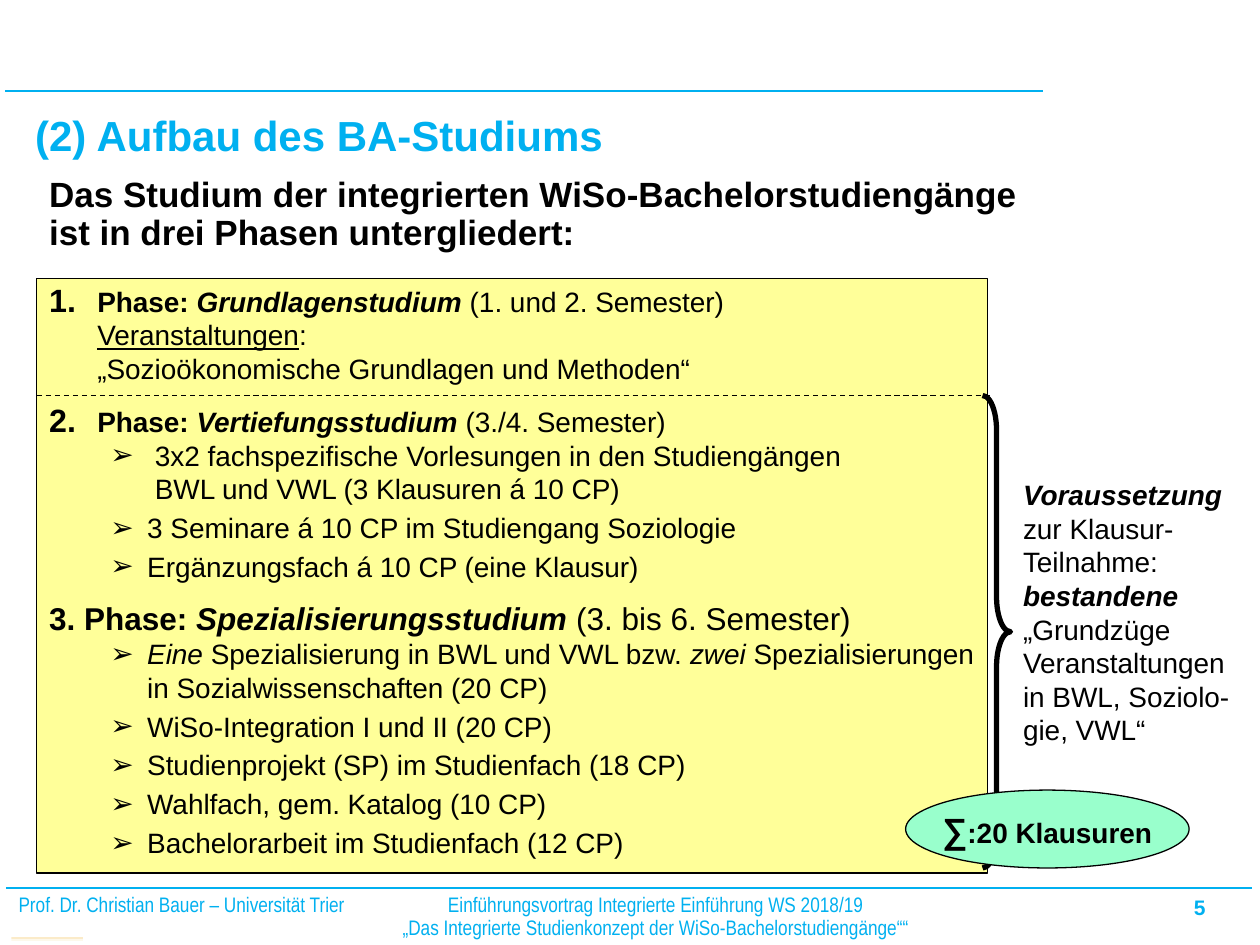
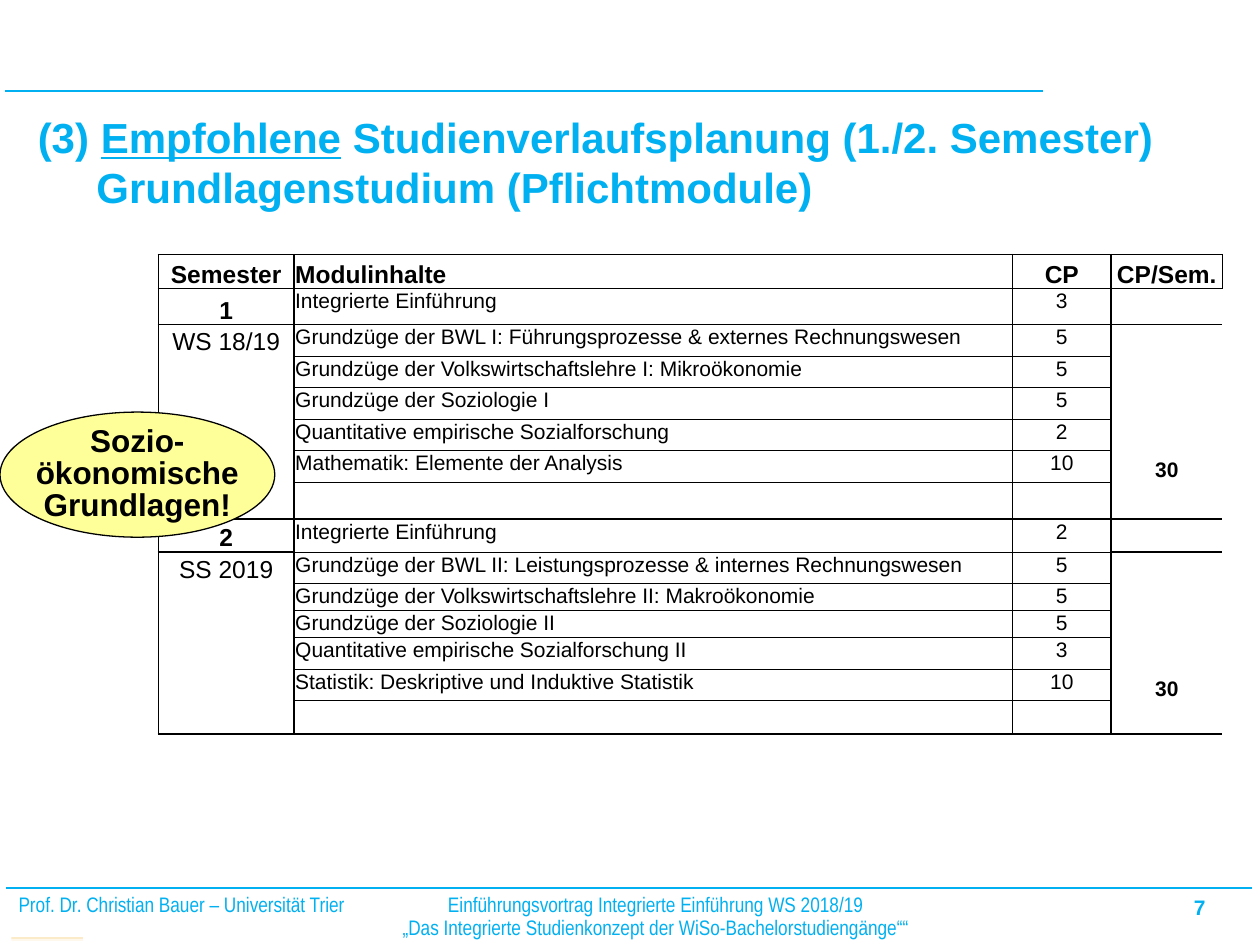
"""Builds two slides on the structure and plan of a bachelor degree."""
from lxml import etree
from pptx import Presentation
from pptx import util as u
from pptx.dml.color import RGBColor
from pptx.enum import dml, shapes, text
from pptx.oxml import ns

Pt = u.Pt
HUE = {"blue": "00B0F0", "black": "000000", "cream": "FFFF99",
       "mint": "99FFCC", "sand": "F5C966"}
LEFT, MID, RIGHT = (text.PP_ALIGN.LEFT, text.PP_ALIGN.CENTER,
                    text.PP_ALIGN.RIGHT)
TOP, CORE, BASE = (text.MSO_ANCHOR.TOP, text.MSO_ANCHOR.MIDDLE,
                   text.MSO_ANCHOR.BOTTOM)

TITLE = {"size": 24, "hue": "blue"}
NOTE = {"size": 12, "hue": "blue", "name": "Arial Narrow"}
HEAD = {"size": 16, "hang": 27.5, "mark": "num"}
ITEM = {"size": 16, "left": 56, "hang": 21, "mark": "➢", "after": 3}

PHASES = [
    ([("Phase: ", "b"), ("Grundlagenstudium ", "bi"),
      ("(1. und 2. Semester)\n", ""), ("Veranstaltungen", "u"),
      (":\n„Sozioökonomische Grundlagen und Methoden“", "")], HEAD),
    ([("Phase: ", "b"), ("Vertiefungsstudium ", "bi"),
      ("(3./4. Semester)", "")], {**HEAD, "before": 11.2}),
    ([(" 3x2 fachspezifische Vorlesungen in den Studiengängen\n"
       " BWL und VWL (3 Klausuren á 10 CP)", "")], ITEM),
    ([("3 Seminare á 10 CP im Studiengang Soziologie", "")], ITEM),
    ([("Ergänzungsfach á 10 CP (eine Klausur)", "")], ITEM),
    ([("3. Phase: ", "b"), ("Spezialisierungsstudium ", "bi"),
      ("(3. bis 6. Semester)", "")],
     {"size": 18, "hang": 21.5, "before": 6}),
    ([("Eine", "i"), (" Spezialisierung in BWL und VWL bzw. ", ""),
      ("zwei ", "i"),
      ("Spezialisierungen in Sozialwissenschaften (20 CP)", "")], ITEM),
    ([("WiSo-Integration I und II (20 CP)", "")], ITEM),
    ([("Studienprojekt (SP) im Studienfach (18 CP)", "")], ITEM),
    ([("Wahlfach, gem. Katalog (10 CP)", "")], ITEM),
    ([("Bachelorarbeit im Studienfach (12 CP)", "")], ITEM),
]

TERMS = [
    ("1", "WS 18/19", [
        ("Integrierte Einführung", "3"),
        ("Grundzüge der BWL I: Führungsprozesse & externes Rechnungswesen",
         "5"),
        ("Grundzüge der Volkswirtschaftslehre I: Mikroökonomie", "5"),
        ("Grundzüge der Soziologie I", "5"),
        ("Quantitative empirische Sozialforschung", "2"),
        ("Mathematik: Elemente der Analysis", "10")]),
    ("2", "SS 2019", [
        ("Integrierte Einführung", "2"),
        ("Grundzüge der BWL II: Leistungsprozesse & internes Rechnungswesen",
         "5"),
        ("Grundzüge der Volkswirtschaftslehre II: Makroökonomie", "5"),
        ("Grundzüge der Soziologie II", "5"),
        ("Quantitative empirische Sozialforschung II", "3"),
        ("Statistik: Deskriptive und Induktive Statistik", "10")]),
]
WIDTHS = [77.5, 410.5, 56.5, 63.5]
HEIGHTS = [19.5, 20.5, 18, 18, 18, 18, 18, 21, 19, 18, 15.5, 15.5, 18, 18, 19]


def rgb(hue):
    """Return the colour of a palette name."""
    return RGBColor.from_string(HUE[hue])


def put(thing, vals):
    """Set each attribute of a dict on an object."""
    for key, val in vals.items():
        setattr(thing, key, val)


def sub(node, tag, **attrs):
    """Append a DrawingML child element."""
    return etree.SubElement(node, ns.qn("a:" + tag), attrs)


def mark(par, look):
    """Give a paragraph its indent and its bullet or number."""
    props = par._p.get_or_add_pPr()
    hang = look["hang"]
    props.set("marL", str(int(Pt(look.get("left", hang)))))
    props.set("indent", str(-int(Pt(hang))))
    if look.get("mark") == "num":
        sub(props, "buSzPct", val="115000")
        sub(props, "buFont", typeface="Arial")
        sub(props, "buAutoNum", type="arabicPeriod")
    elif "mark" in look:
        sub(props, "buChar", char=look["mark"])


def write(par, runs, look):
    """Fill a paragraph with runs of (words, flags, own size)."""
    size = look["size"]
    put(par, {"alignment": look.get("align", LEFT),
              "line_spacing": look.get("lines"),
              "space_before": Pt(look.get("before", 0)),
              "space_after": Pt(look.get("after", 0))})
    if "hang" in look:
        mark(par, look)
    for words, flags, *own in runs:
        for row, part in enumerate(words.split("\n")):
            if row:
                par.add_line_break()
                sub(par._p[-1], "rPr", sz=str(size * 100))
            if part:
                run = par.add_run()
                run.text = part
                put(run.font, {"name": look.get("name", "Arial"),
                               "size": Pt(own[0] if own else size),
                               "bold": "b" in flags, "italic": "i" in flags,
                               "underline": "u" in flags})
                run.font.color.rgb = rgb(look.get("hue", "black"))
    if not par.runs:
        sub(par._p, "endParaRPr", sz=str(size * 100))


def fill(frame, pars, anchor=TOP, wrap=True):
    """Fill a text frame with (runs, look) paragraphs."""
    put(frame, {"vertical_anchor": anchor, "word_wrap": wrap})
    for num, (runs, look) in enumerate(pars):
        par = frame.add_paragraph() if num else frame.paragraphs[0]
        write(par, runs, look)


def label(slide, spot, runs, look, **opts):
    """Add a text box with one paragraph."""
    box = slide.shapes.add_textbox(*map(Pt, spot))
    fill(box.text_frame, [(runs, look)], **opts)
    return box


def form(slide, kind, spot, hue=None, edge=0.75):
    """Add a preset shape with a plain fill and a black edge."""
    item = slide.shapes.add_shape(kind, *map(Pt, spot))
    item.shadow.inherit = False
    if hue:
        item.fill.solid()
        item.fill.fore_color.rgb = rgb(hue)
    else:
        item.fill.background()
    if edge:
        item.line.color.rgb = rgb("black")
        item.line.width = Pt(edge)
    else:
        item.line.fill.background()
    return item


def rule(slide, start, end, high, hue="blue", width=1.5, dash=None):
    """Add a level line."""
    line = slide.shapes.add_connector(
        shapes.MSO_CONNECTOR.STRAIGHT, Pt(start), Pt(high), Pt(end), Pt(high))
    line.line.color.rgb = rgb(hue)
    put(line.line, {"width": Pt(width), "dash_style": dash})
    sub(line._element.spPr, "effectLst")


def base(deck, page):
    """Add a blank slide with the shared lines and footer."""
    slide = deck.slides.add_slide(deck.slide_layouts[6])
    rule(slide, 3, 596, 52)
    for step in range(3):
        form(slide, shapes.MSO_SHAPE.RECTANGLE,
             (6.5, 535.7 + 0.7 * step, 41, 0.1), "sand", 0)
    rule(slide, 3.5, 715.5, 507.5)
    label(slide, (606, 507.5, 90, 24), [(page, "b")],
          {"size": 12, "hue": "blue", "align": RIGHT})
    label(slide, (3.5, 507.5, 226, 20),
          [("Prof. Dr. Christian Bauer – Universität Trier", "")],
          {**NOTE, "lines": 0.9})
    label(slide, (222.5, 507.5, 304.5, 33),
          [("Einführungsvortrag Integrierte Einführung WS 2018/19\n"
            "„Das Integrierte Studienkonzept der "
            "WiSo-Bachelorstudiengänge““", "")],
          {**NOTE, "lines": 0.9, "align": MID}, wrap=False)
    return slide


def phases(deck):
    """Build the slide on the three phases."""
    slide = base(deck, "5")
    label(slide, (13, 29.5, 696, 66), [("(2) Aufbau des BA-Studiums", "b")],
          {**TITLE, "lines": 0.9}, anchor=BASE)
    panel = form(slide, shapes.MSO_SHAPE.RECTANGLE,
                 (21, 159, 543.5, 340), "cream")
    fill(panel.text_frame, PHASES)
    label(slide, (21, 98, 659, 50.5),
          [("Das Studium der integrierten WiSo-Bachelorstudiengänge\n"
            "ist in drei Phasen untergliedert:", "b")],
          {"size": 20, "lines": 0.9})
    rule(slide, 21, 566, 226, "black", 0.75, dml.MSO_LINE.DASH)
    brace = form(slide, shapes.MSO_SHAPE.RIGHT_BRACE,
                 (561.5, 226, 16, 270), edge=3)
    brace.adjustments[0] = 1.24
    label(slide, (577.5, 269.5, 142, 162.5),
          [("Voraussetzung ", "bi"), ("zur Klausur-\nTeilnahme: ", ""),
           ("bestandene ", "bi"),
           ("„Grundzüge Veranstaltungen in BWL, Soziolo-gie, VWL“", "")],
          {"size": 16})
    total = form(slide, shapes.MSO_SHAPE.OVAL, (517.5, 451.5, 162, 44.5),
                 "mint")
    fill(total.text_frame, [([("∑", "b", 20), (":20 Klausuren", "b")],
                             {"size": 16, "align": MID})], CORE, False)


def rows():
    """List the table rows as (words, flags, size) cells."""
    out = [[(name, "b", 14)
            for name in ("Semester", "Modulinhalte", "CP", "CP/Sem.")]]
    for num, term, units in TERMS:
        first = [(num, "b", 14), (term, "", 14)] + [("", "", 12)] * 5
        last = [("", "", 12)] * 5 + [("30", "b", 12), ("", "", 12)]
        for side, (name, points), total in zip(first, units + [("", "")],
                                               last):
            out.append([side, (name, "", 12), (points, "", 12), total])
    return out


def edges(row, col):
    """Return the border widths of a cell by side."""
    span = len(TERMS[0][2]) + 1
    thin = 0.5 if col in (1, 2) else 0
    return {"L": 1, "R": 1 if col < 3 or row == 0 else 0,
            "T": 1 if row == 0 or row % span == 1 else thin,
            "B": 1 if row % span == 0 else thin}


def frame(cell, row, col):
    """Draw the borders of a cell and clear its fill."""
    props = cell._tc.get_or_add_tcPr()
    for side, width in edges(row, col).items():
        if width:
            line = sub(props, "ln" + side, w=str(int(Pt(width))))
            sub(sub(line, "solidFill"), "srgbClr", val=HUE["black"])
    cell.fill.background()


def grid(slide):
    """Add the table of modules."""
    data = rows()
    table = slide.shapes.add_table(
        len(data), len(WIDTHS), Pt(90.5), Pt(145.5),
        Pt(sum(WIDTHS)), Pt(sum(HEIGHTS))).table
    put(table, {"first_row": False, "horz_banding": False})
    style = table._tbl.tblPr.find(ns.qn("a:tableStyleId"))
    style.text = "{2D5ABB26-0587-4C30-8999-92F81FD0307C}"
    for col, width in zip(table.columns, WIDTHS):
        col.width = Pt(width)
    for row, high in enumerate(HEIGHTS):
        table.rows[row].height = Pt(high)
        for col, (words, flags, size) in enumerate(data[row]):
            cell = table.cell(row, col)
            low = row == 0 or col in (0, 3)
            put(cell, {"margin_left": Pt(0.7), "margin_right": Pt(0.7),
                       "margin_top": Pt(0.7), "margin_bottom": 0,
                       "vertical_anchor": BASE if low else TOP})
            write(cell.text_frame.paragraphs[0], [(words, flags)],
                  {"size": size, "align": LEFT if col == 1 else MID})
            frame(cell, row, col)


def plan(deck):
    """Build the slide on the first two semesters."""
    slide = base(deck, "7")
    title = label(slide, (14.5, 63.5, 686, 82),
                  [("(3) ", "b"), ("Empfohlene", "bu"),
                   (" Studienverlaufsplanung (1./2. Semester)\n"
                    "Grundlagenstudium (Pflichtmodule)", "b")],
                  {**TITLE, "hang": 33.5})
    title.text_frame.margin_top = 0
    grid(slide)
    badge = form(slide, shapes.MSO_SHAPE.OVAL, (0, 235.5, 157, 71.5), "cream")
    fill(badge.text_frame, [([("Sozio-\nökonomische\nGrundlagen!", "b")],
                             {"size": 18, "lines": 0.85, "align": MID})],
         CORE, False)


def main():
    """Build and save the deck."""
    deck = Presentation()
    put(deck, {"slide_width": Pt(720), "slide_height": Pt(540)})
    phases(deck)
    plan(deck)
    deck.save("out.pptx")


if __name__ == "__main__":
    main()
